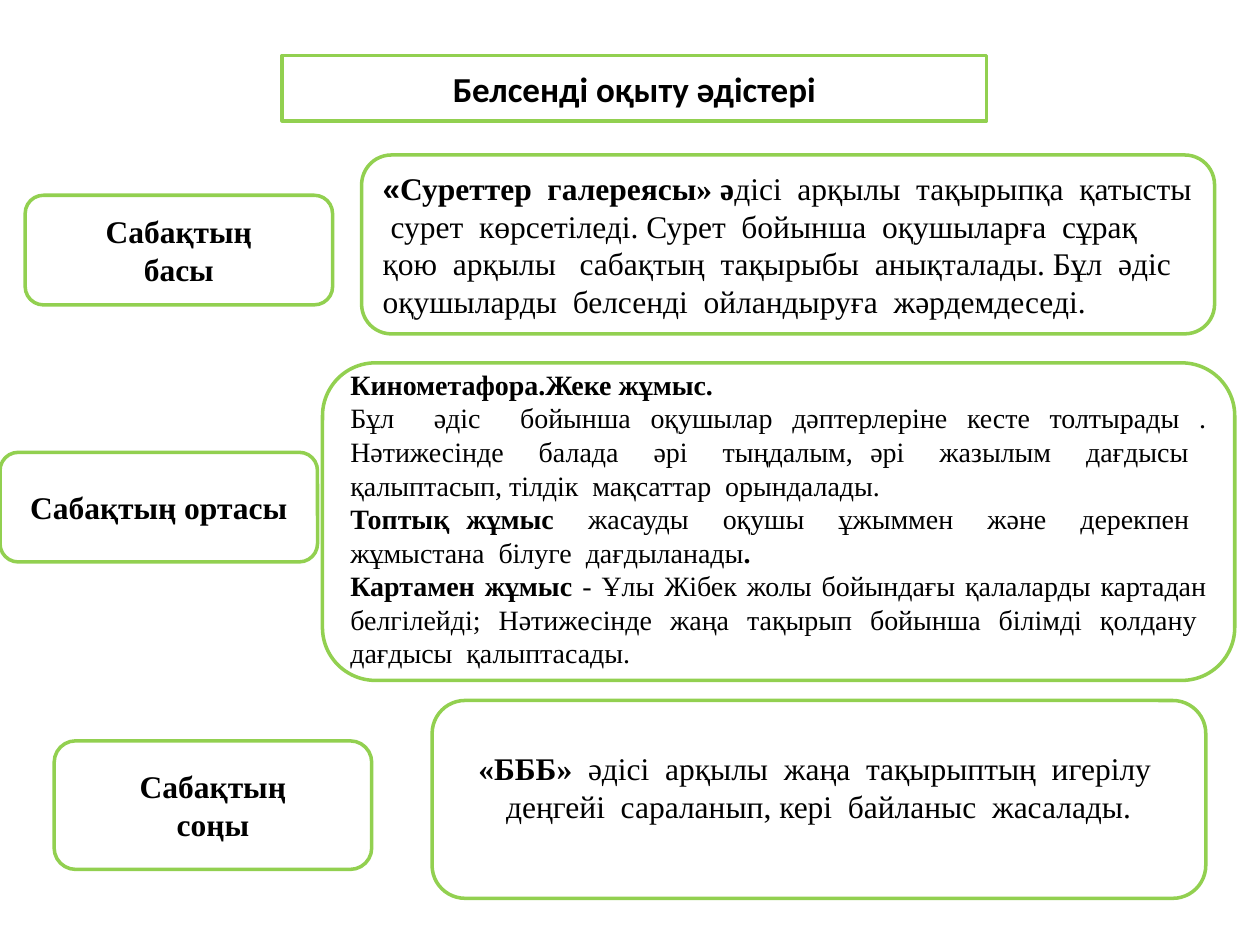
from pptx import Presentation
from pptx.dml.color import RGBColor
from pptx.enum.shapes import MSO_SHAPE
from pptx.enum.text import MSO_ANCHOR, PP_ALIGN
from pptx.util import Inches, Pt

RECT, ROUND = MSO_SHAPE.RECTANGLE, MSO_SHAPE.ROUNDED_RECTANGLE
LEFT, CENTER, JUSTIFY = PP_ALIGN.LEFT, PP_ALIGN.CENTER, PP_ALIGN.JUSTIFY
MIDDLE = MSO_ANCHOR.MIDDLE
COLORS = {"paper": "FFFFFF", "border": "92D050", "text": "000000"}
SERIF, SANS = "Times New Roman", "Calibri"
COLS, ROWS = 100, 75


class Deck:
    def __init__(self):
        self.prs = Presentation()
        self.prs.slide_width, self.prs.slide_height = Inches(10), Inches(7.5)
        self.slide = self.prs.slides.add_slide(self.prs.slide_layouts[6])
        self.col = self.prs.slide_width / COLS
        self.row = self.prs.slide_height / ROWS

    def color(self, name):
        return RGBColor.from_string(COLORS[name])

    def box(self, kind, col, row, cols, rows):
        sp = self.slide.shapes.add_shape(
            kind, int(col * self.col), int(row * self.row),
            int(cols * self.col), int(rows * self.row))
        sp.shadow.inherit = False
        sp.fill.solid()
        sp.fill.fore_color.rgb = self.color("paper")
        sp.line.color.rgb = self.color("border")
        sp.line.width = Pt(2)
        return sp

    def fill_text(self, sp, paragraphs, size=18, align=CENTER, font=SERIF, bottom=0.05):
        tf = sp.text_frame
        tf.word_wrap = True
        tf.vertical_anchor = MIDDLE
        tf.margin_bottom = Inches(bottom)
        for i, parts in enumerate(paragraphs):
            p = tf.add_paragraph() if i else tf.paragraphs[0]
            p.alignment = align
            for text, bold in parts:
                r = p.add_run()
                r.text = text
                r.font.name, r.font.size, r.font.bold = font, Pt(size), bold
                r.font.color.rgb = self.color("text")

    def title(self, text, *place):
        self.fill_text(self.box(RECT, *place), [[(text, True)]], size=20, font=SANS)

    def stage(self, lines, *place):
        self.fill_text(self.box(ROUND, *place), [[(line, True)] for line in lines])

    def method(self, paragraphs, *place, **style):
        sp = self.box(ROUND, *place)
        self.fill_text(sp, paragraphs, **style)
        return sp


def main():
    deck = Deck()
    deck.title("Белсенді оқыту әдістері", 22.4, 4.4, 55.9, 5.2)

    deck.stage(["Сабақтың", "басы"], 2, 15.5, 24.4, 8.7)
    deck.stage(["Сабақтың ортасы"], 0, 35.9, 25.2, 8.7)
    deck.stage(["Сабақтың", "соңы"], 4.3, 58.8, 25.2, 10.2)

    gallery = deck.method([[
        ("«", True),
        ("Суреттер  галереясы» ә", True),
        ("дісі  арқылы  тақырыпқа  қатысты  сурет  көрсетіледі. Сурет  бойынша  "
         "оқушыларға  сұрақ  қою  арқылы   сабақтың  тақырыбы  анықталады. Бұл  әдіс  "
         "оқушыларды  белсенді  ойландыруға  жәрдемдеседі.", False),
    ]], 28.7, 12.3, 67.7, 14.2, align=LEFT)
    gallery.text_frame.paragraphs[0].runs[0].font.name = "Arial"

    deck.method([
        [("Кинометафора.Жеке жұмыс.", True)],
        [("Бұл  әдіс  бойынша оқушылар дәптерлеріне кесте толтырады . Нәтижесінде  "
          "балада  әрі  тыңдалым, әрі  жазылым  дағдысы  қалыптасып, тілдік  мақсаттар  "
          "орындалады.", False)],
        [("Топтық жұмыс  ", True),
         ("жасауды  оқушы  ұжыммен  және  дерекпен  жұмыстана  білуге  дағдыланады", False),
         (".", True)],
        [("Картамен жұмыс ", True),
         ("- Ұлы Жібек жолы бойындағы қалаларды картадан белгілейді;  Нәтижесінде  жаңа  "
          "тақырып  бойынша  білімді  қолдану  дағдысы  қалыптасады.", False)],
    ], 25.6, 28.8, 72.4, 25.2, size=16, align=JUSTIFY, bottom=0.1)

    deck.method([[
        ("«БББ»", True),
        ("  әдісі  арқылы  жаңа  тақырыптың  игерілу  деңгейі  сараланып, кері  "
         "байланыс  жасалады.", False),
    ]], 34.3, 55.6, 61.4, 15.7, bottom=0.25)

    deck.prs.save("out.pptx")


if __name__ == "__main__":
    main()
